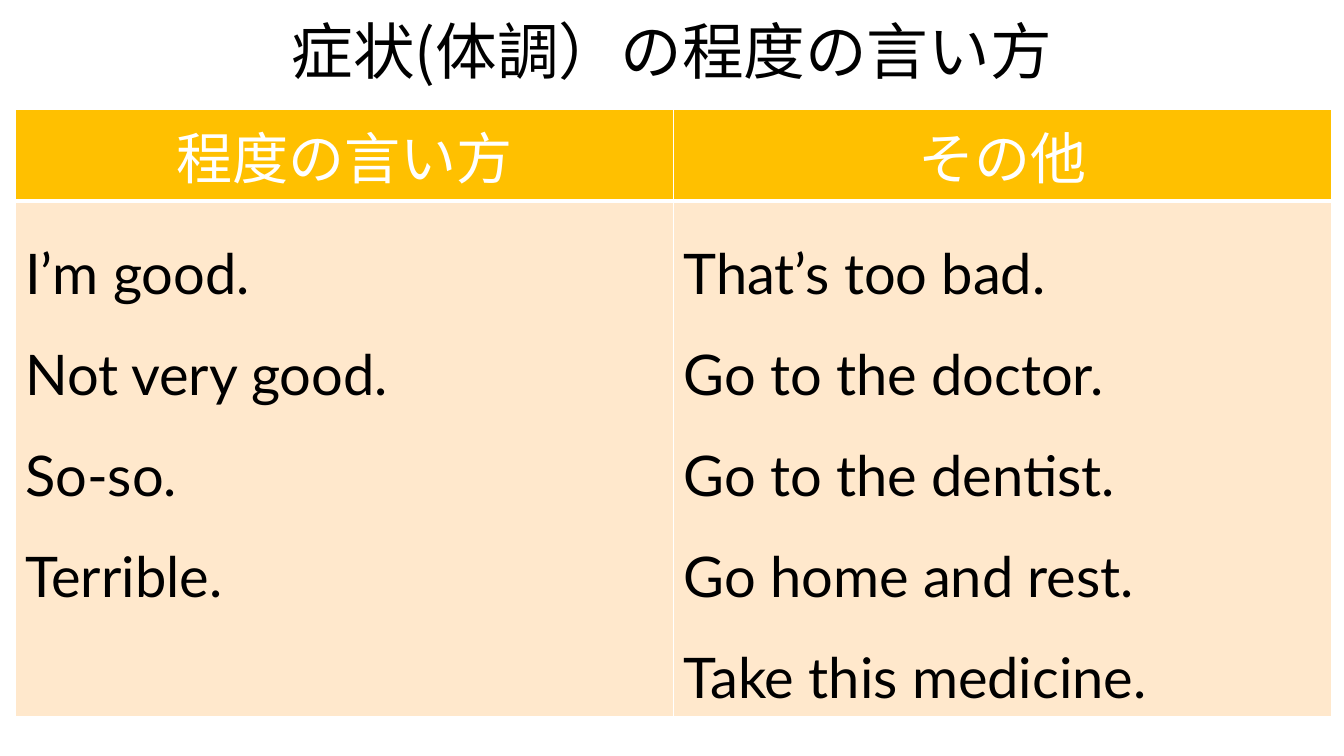
from lxml.etree import SubElement
from pptx import Presentation
from pptx.dml.color import RGBColor
from pptx.enum.text import MSO_ANCHOR as Anchor, PP_ALIGN as Align
from pptx.oxml.ns import qn
from pptx.util import Inches, Pt

# Content
TITLE = "症状(体調）の程度の言い方"
PHRASES = {
    "程度の言い方": ["I’m good.", "Not very good.", "So-so.", "Terrible."],
    "その他": [
        "That’s too bad.",
        "Go to the doctor.",
        "Go to the dentist.",
        "Go home and rest.",
        "Take this medicine.",
    ],
}

# Look
COLORS = {"text": "000000", "white": "FFFFFF", "header": "FFC000", "body": "FFE8CC"}
JAPANESE, ENGLISH = "Noto Sans CJK JP", "Lato"
SLIDE_W, SLIDE_H = 13.33, 7.5
TABLE_LEFT, TABLE_TOP, TABLE_W = 0.15, 1.09, 13.06
HEADER_H, BODY_H = 0.88, 5.12


def write(frame, lines, size=40, font=JAPANESE, color="text",
          align=Align.CENTER, spacing=1.0):
    for index, line in enumerate(lines):
        paragraph = frame.paragraphs[0] if index == 0 else frame.add_paragraph()
        paragraph.alignment = align
        paragraph.line_spacing = spacing
        run = paragraph.add_run()
        run.text = line
        run.font.size = Pt(size)
        run.font.bold = False
        run.font.name = font
        run.font.color.rgb = RGBColor.from_string(COLORS[color])
        SubElement(run.font._element, qn("a:ea"), typeface=JAPANESE)


def style_cell(cell, fill, top=1, bottom=1):
    properties = cell._tc.get_or_add_tcPr()
    for side, width in {"L": 1, "R": 1, "T": top, "B": bottom}.items():
        border = SubElement(properties, qn(f"a:ln{side}"), w=str(Pt(width)))
        solid = SubElement(border, qn("a:solidFill"))
        SubElement(solid, qn("a:srgbClr"), val=COLORS["white"])
    cell.fill.solid()
    cell.fill.fore_color.rgb = RGBColor.from_string(COLORS[fill])


deck = Presentation()
deck.slide_width, deck.slide_height = Inches(SLIDE_W), Inches(SLIDE_H)
slide = deck.slides.add_slide(deck.slide_layouts[5])

# Title
title = slide.shapes.title
title.left, title.top = Inches(0), Inches(0)
title.width, title.height = Inches(SLIDE_W), Inches(TABLE_TOP)
title.text_frame.vertical_anchor = Anchor.MIDDLE
write(title.text_frame, [TITLE], size=44, spacing=0.9)

# Table of phrases, one column per heading
table = slide.shapes.add_table(
    2, len(PHRASES), Inches(TABLE_LEFT), Inches(TABLE_TOP),
    Inches(TABLE_W), Inches(HEADER_H + BODY_H)).table
table.rows[0].height, table.rows[1].height = Inches(HEADER_H), Inches(BODY_H)

for column, (heading, phrases) in enumerate(PHRASES.items()):
    table.columns[column].width = Inches(TABLE_W / len(PHRASES))
    header, body = table.cell(0, column), table.cell(1, column)
    style_cell(header, "header", bottom=3)
    header.vertical_anchor = Anchor.MIDDLE
    write(header.text_frame, [heading], color="white")
    style_cell(body, "body", top=3)
    write(body.text_frame, phrases, font=ENGLISH, align=Align.LEFT, spacing=1.5)

deck.save("out.pptx")
